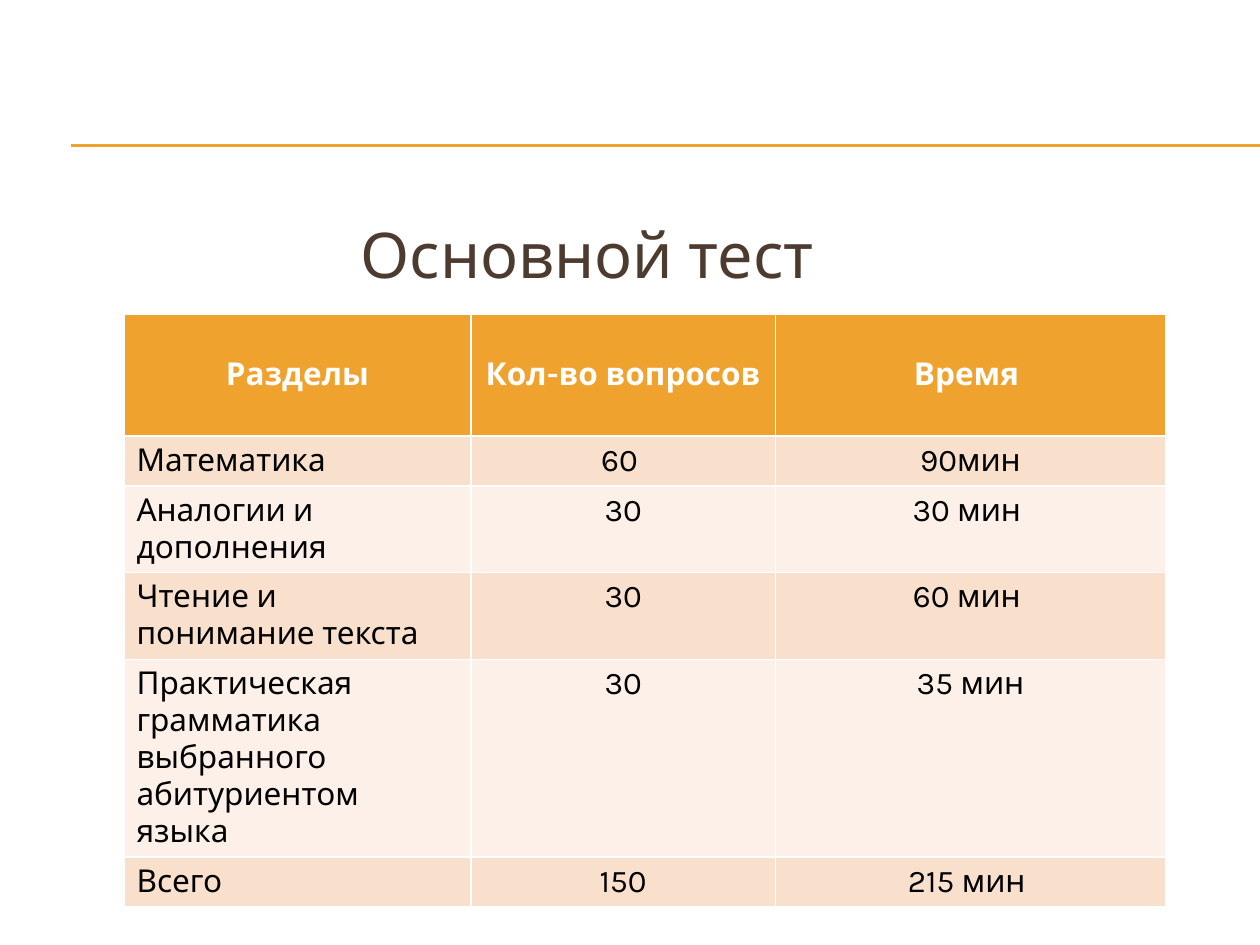
from lxml.etree import SubElement
from pptx import Presentation
from pptx.dml.color import RGBColor
from pptx.enum.shapes import MSO_CONNECTOR
from pptx.enum.text import MSO_ANCHOR, MSO_AUTO_SIZE, PP_ALIGN
from pptx.oxml.ns import qn
from pptx.util import Pt

ORANGE = RGBColor(0xF0, 0xA2, 0x2E)
PEACH = RGBColor(0xF9, 0xE0, 0xCD)
CREAM = RGBColor(0xFC, 0xF0, 0xE8)
BROWN = RGBColor(0x4E, 0x3B, 0x30)
WHITE = RGBColor(0xFF, 0xFF, 0xFF)
BLACK = RGBColor(0, 0, 0)
FONT = "Karla"

HEADING = "Основной тест"
SECTIONS = [
    ("Разделы", "Кол-во вопросов ", "Время "),
    ("Математика", "60 ", "90мин"),
    ("Аналогии и дополнения", "30", "30 мин "),
    ("Чтение и понимание текста", "30", "60 мин "),
    ("Практическая грамматика выбранного абитуриентом языка", "30", "35 мин"),
    ("Всего", "150", "215 мин "),
]
COLUMN_WIDTHS = [198.4, 173.8, 223.2]
HEADER_HEIGHT = 69.7
LINE_HEIGHT, CELL_PADDING = 21.2, 7.2
LINE_COUNTS = [1, 2, 2, 4, 1]
RULE_LEFT, RULE_RIGHT, RULE_TOPS = 40.5, 720, (82.8, 83.5)


def style_text(paragraph, size, color, bold, align):
    paragraph.alignment = align
    for run in paragraph.runs:
        run.font.name = FONT
        run.font.size = Pt(size)
        run.font.bold = bold
        run.font.color.rgb = color


def add_rule(slide, top):
    rule = slide.shapes.add_connector(
        MSO_CONNECTOR.STRAIGHT, Pt(RULE_LEFT), Pt(top), Pt(RULE_RIGHT), Pt(top))
    rule.line.color.rgb = ORANGE
    rule.line.width = Pt(0.75)
    SubElement(rule._element.spPr, qn("a:effectLst"))


def add_heading(slide):
    heading = slide.shapes.title
    heading.left, heading.top = Pt(24), Pt(119.6)
    heading.width, heading.height = Pt(623), Pt(56)
    frame = heading.text_frame
    frame.text = HEADING
    frame.auto_size = MSO_AUTO_SIZE.NONE
    frame.vertical_anchor = MSO_ANCHOR.TOP
    style_text(frame.paragraphs[0], 36, BROWN, False, PP_ALIGN.CENTER)


def add_sections_table(slide):
    heights = [HEADER_HEIGHT] + [n * LINE_HEIGHT + CELL_PADDING for n in LINE_COUNTS]
    table = slide.shapes.add_table(
        len(SECTIONS), len(COLUMN_WIDTHS), Pt(70.8), Pt(179.6),
        Pt(sum(COLUMN_WIDTHS)), Pt(sum(heights))).table
    for column, width in zip(table.columns, COLUMN_WIDTHS):
        column.width = Pt(width)
    for r, (height, texts) in enumerate(zip(heights, SECTIONS)):
        table.rows[r].height = Pt(height)
        header = r == 0
        fill = ORANGE if header else PEACH if r % 2 else CREAM
        for c, text in enumerate(texts):
            cell = table.cell(r, c)
            cell.text_frame.text = text
            cell.fill.solid()
            cell.fill.fore_color.rgb = fill
            cell.vertical_anchor = MSO_ANCHOR.MIDDLE if header else MSO_ANCHOR.TOP
            style_text(cell.text_frame.paragraphs[0], 18, WHITE if header else BLACK,
                       header, PP_ALIGN.CENTER if header or c else PP_ALIGN.LEFT)


def main():
    deck = Presentation()
    deck.slide_width, deck.slide_height = Pt(720), Pt(540)
    slide = deck.slides.add_slide(deck.slide_layouts[5])
    for top in RULE_TOPS:
        add_rule(slide, top)
    add_heading(slide)
    add_sections_table(slide)
    deck.save("out.pptx")


if __name__ == "__main__":
    main()
